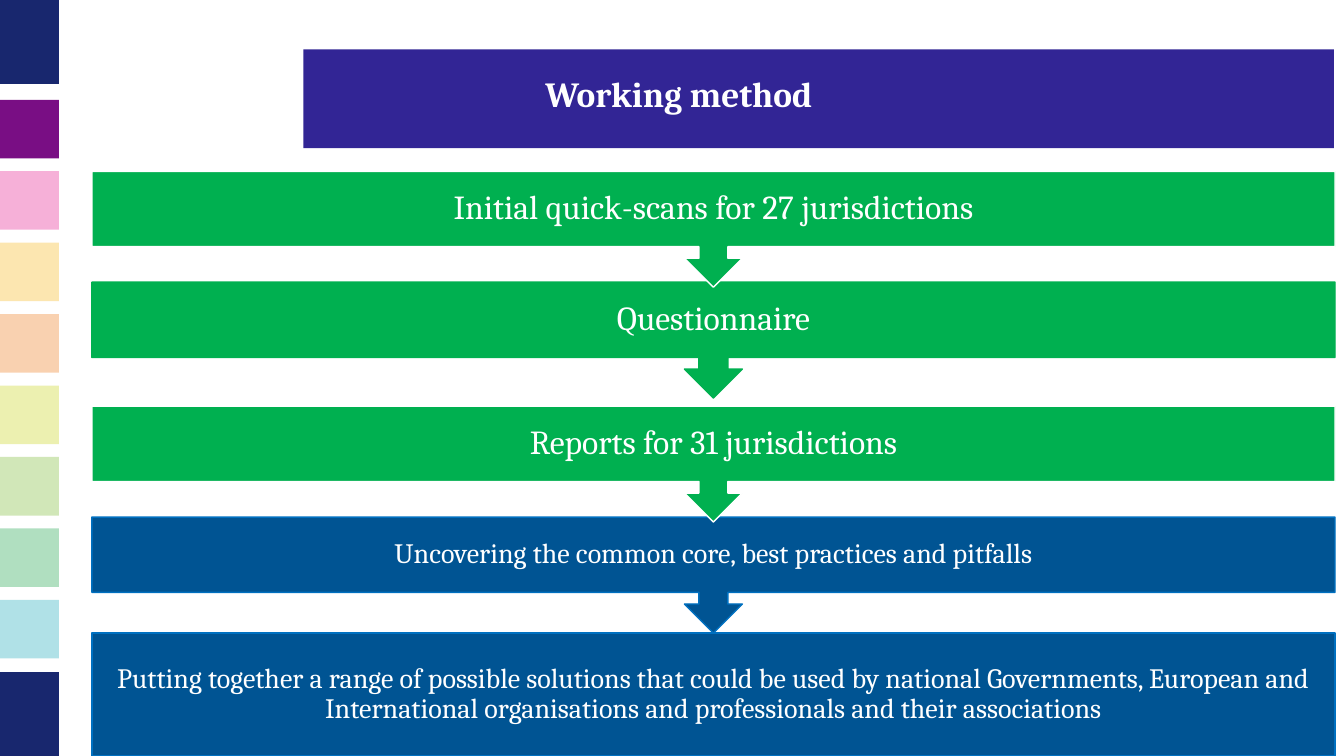
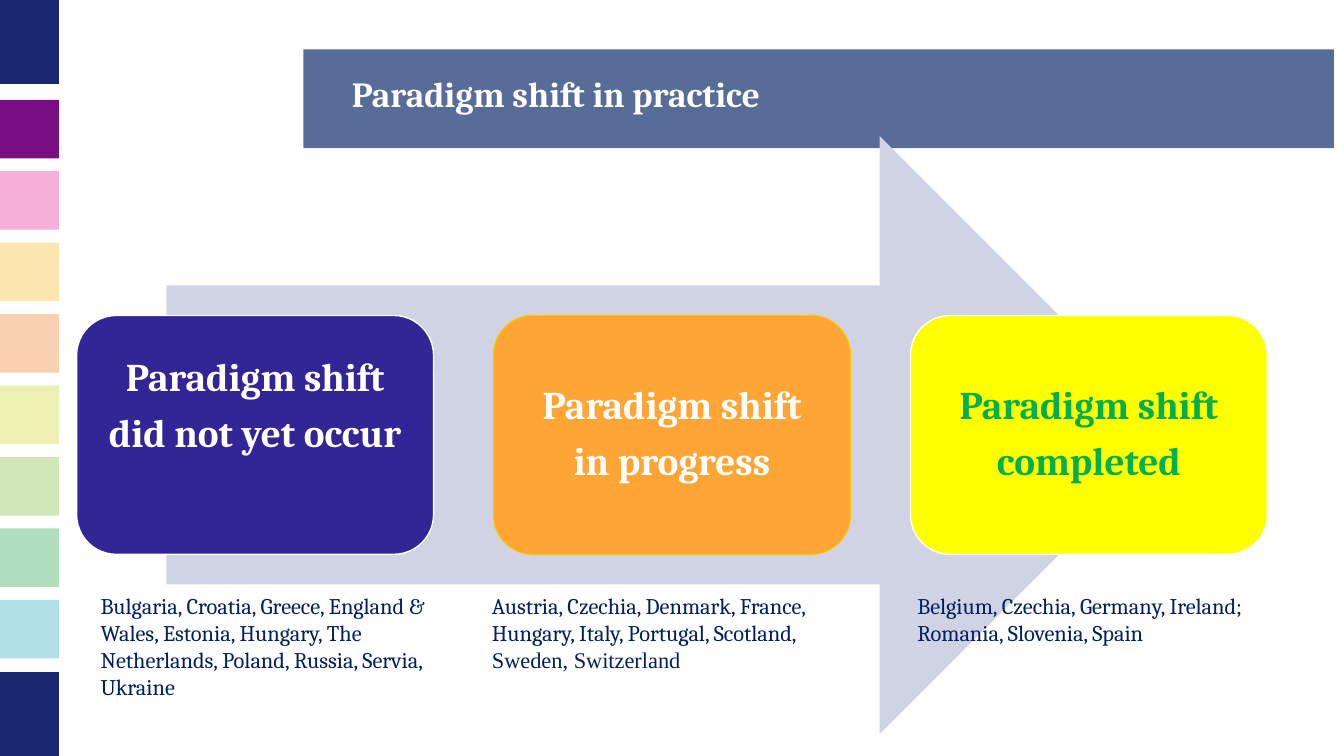
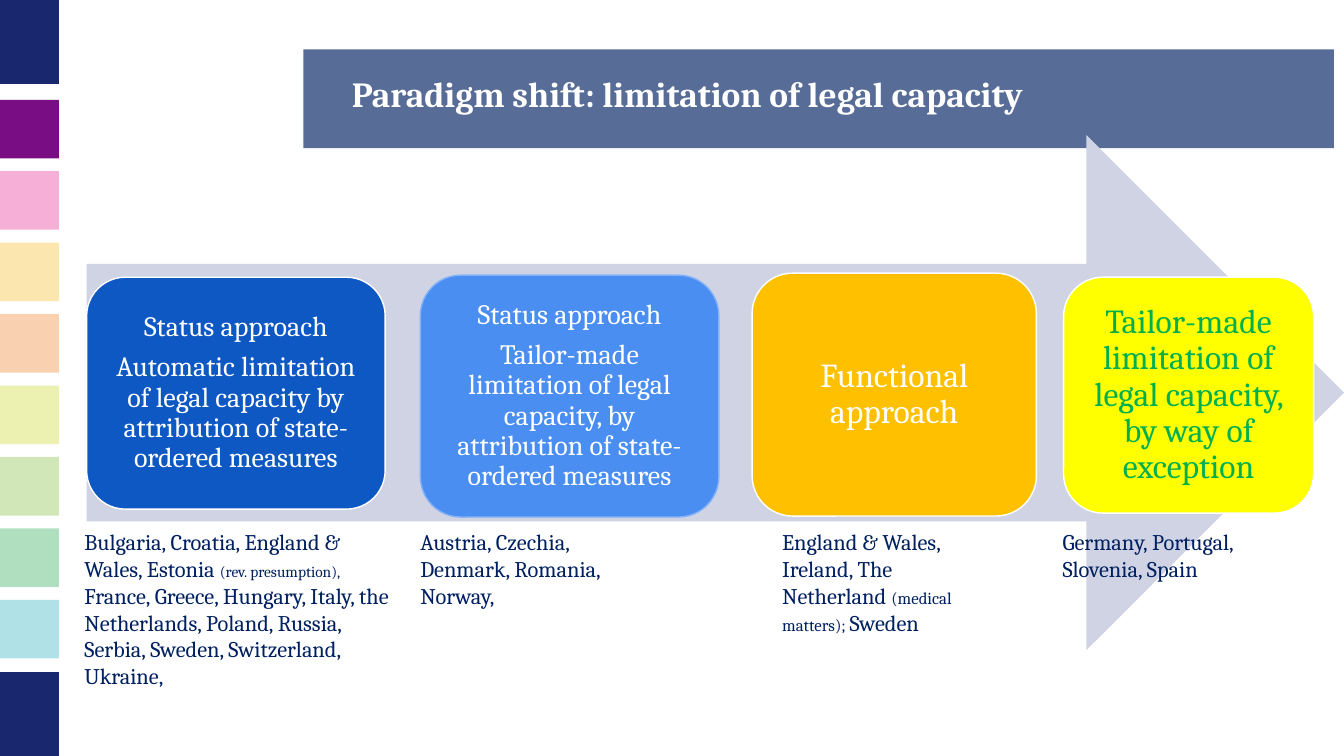
from dataclasses import dataclass

from lxml.etree import SubElement
from pptx import Presentation
from pptx.dml.color import RGBColor
from pptx.enum.shapes import MSO_SHAPE as Shape
from pptx.enum.text import MSO_ANCHOR as Anchor, MSO_AUTO_SIZE as Fit, PP_ALIGN as Align
from pptx.oxml.ns import qn
from pptx.util import Inches, Pt

FONT = "Cambria"
WHITE, NAVY, GREEN, BLUE = "FFFFFF", "002060", "00B050", "005493"
INDIGO, YELLOW, PALE = "322595", "FFFF00", "D0D3E3"
EDGE = "18276E"
STRIPS = ["790E84", "E40083", "F8B100", "EC6D00", "C2D000", "6CB21B", "009836", "00A1B3"]
WIDE, HIGH = Inches(13.33), Inches(7.5)


@dataclass(frozen=True)
class Area:
    """A rectangle in percent of the slide's width and height."""
    x: float
    y: float
    w: float
    h: float

    def emu(self) -> tuple[int, ...]:
        return tuple(round(part * side / 100) for part, side in
                     zip((self.x, self.y, self.w, self.h), (WIDE, HIGH) * 2))


@dataclass(frozen=True)
class Run:
    text: str
    size: float | None = None
    font: str = FONT


@dataclass(frozen=True)
class Step:
    text: str
    y: float
    fill: str = GREEN
    line: str = WHITE
    size: float = 24
    h: float = 15.33
    kind: Shape = Shape.DOWN_ARROW_CALLOUT


@dataclass(frozen=True)
class Card:
    """A rounded box of the arrow, with the countries below it."""
    area: Area
    paras: list[str]
    fill: str
    note: list[Run]
    note_x: float
    note_w: float
    line: str = WHITE
    color: str = WHITE
    size: float = 20
    bold: bool = False
    pad: float = 0.08
    low: float = 0


def rgb(code: str) -> RGBColor:
    return RGBColor.from_string(code)


def paint(shape, fill: str, alpha: int = 100) -> None:
    shape.fill.solid()
    shape.fill.fore_color.rgb = rgb(fill)
    if alpha < 100:
        tone = shape.element.spPr.find(qn("a:solidFill"))[0]
        SubElement(tone, qn("a:alpha")).set("val", str(alpha * 1000))


def write(shape, paras: list, *, size: float, color: str = WHITE, bold: bool = False,
          align: Align = Align.CENTER, anchor: Anchor = Anchor.MIDDLE, leading: float = 0.9,
          pads: tuple[float, float, float, float] = (0.1, 0.05, 0.1, 0.05)) -> None:
    """Fill a shape; a paragraph is a string or a list of runs, pads go left, top, right, bottom."""
    frame = shape.text_frame
    frame.word_wrap, frame.auto_size, frame.vertical_anchor = True, Fit.NONE, anchor
    (frame.margin_left, frame.margin_top,
     frame.margin_right, frame.margin_bottom) = map(Inches, pads)
    for i, para in enumerate(paras):
        line = frame.add_paragraph() if i else frame.paragraphs[0]
        line.alignment, line.line_spacing = align, leading
        line.space_before = Pt(0.35 * size if i else 0)
        for part in [Run(para)] if isinstance(para, str) else para:
            run = line.add_run()
            run.text = part.text
            font = run.font
            font.name, font.size, font.bold = part.font, Pt(part.size or size), bold
            font.color.rgb = rgb(color)


def block(slide, kind: Shape, area: Area, fill: str, line: str = "", alpha: int = 100):
    shape = slide.shapes.add_shape(kind, *area.emu())
    shape.shadow.inherit = False
    paint(shape, fill, alpha)
    if line:
        shape.line.color.rgb = rgb(line)
        shape.line.width = Pt(1)
    else:
        shape.line.fill.background()
    return shape


def dress(layout, slide) -> None:
    """Place the title on the layout and move the colour strips there."""
    head = layout.placeholders[0]
    head.left, head.top, head.width, head.height = Area(22.58, 6.53, 76.67, 13.07).emu()
    wide = 4.38
    rects = [(Area(0, y, wide, 11.1), EDGE, 100) for y in (0, 88.9)]
    rects += [(Area(0, 13.2 + 9.45 * i, wide, 7.75), tone, 31 if i else 100)
              for i, tone in enumerate(STRIPS)]
    for i, (area, tone, alpha) in enumerate(rects):
        strip = block(slide, Shape.RECTANGLE, area, tone, alpha=alpha).element
        strip.nvSpPr.cNvPr.set("id", str(100 + i))
        layout.shapes.element.insert(2 + i, strip)


def title(slide, text: str, fill: str, alpha: int = 100, indent: float = 0.48) -> None:
    head = slide.shapes.title
    paint(head, fill, alpha)
    write(head, [text], size=25.2, bold=True, align=Align.LEFT, pads=(indent, 0, 0.1, 0.05))


def flow(slide, steps: list[Step]) -> None:
    for step in reversed(steps):
        box = block(slide, step.kind, Area(6.83, step.y, 92.5, step.h), step.fill, step.line)
        write(box, [step.text], size=step.size, pads=(0.16, 0, 0.16, 0))


def shift(slide, arrow: Area, cards: list[Card], note_y: float) -> None:
    block(slide, Shape.RIGHT_ARROW, arrow, PALE)
    for card in cards:
        box = block(slide, Shape.ROUNDED_RECTANGLE, card.area, card.fill, card.line)
        pad = card.pad
        write(box, card.paras, size=card.size, color=card.color, bold=card.bold,
              pads=(pad, pad, pad, pad + card.low))
        place = Area(card.note_x, note_y, card.note_w, 15.73)
        write(slide.shapes.add_textbox(*place.emu()), [card.note], size=16, color=NAVY,
              align=Align.LEFT, anchor=Anchor.TOP, leading=1)


STEPS = [
    Step("Initial quick-scans for 27 jurisdictions", 22.67),
    Step("Questionnaire", 37.33, line=GREEN),
    Step("Reports for 31 jurisdictions", 53.73),
    Step("Uncovering the common core, best practices and pitfalls", 68.4, BLUE, "0070C0", 20),
    Step("Putting together a range of possible solutions that could be used by national "
         "Governments, European and International organisations and professionals and their "
         "associations", 83.73, BLUE, "0070C0", 20, 16.27, Shape.RECTANGLE),
]


def third(col: int, paras: list[str], fill: str, note: list[Run], note_x: float, **more) -> Card:
    return Card(Area(5.7 + 31.02 * col, 41.73, 26.56, 31.6), paras, fill, note, note_x, 26.63,
                size=28, bold=True, pad=0.12, **more)


STAGES = [
    third(0, ["Paradigm shift", "did not yet occur"], INDIGO,
          [Run("Bulgaria, Croatia, Greece, England & Wales, Estonia, Hungary, The Netherlands, "
               "Poland, Russia, Servia, Ukraine")], 6.75, low=0.56),
    third(1, ["Paradigm shift", "in progress"], "FFA535",
          [Run("Austria, Czechia, Denmark, France, Hungary, Italy, Portugal, Scotland, "),
           Run("Sweden, Switzerland", font="Times New Roman")], 35.86, line="FFC000"),
    third(2, ["Paradigm shift", "completed"], YELLOW,
          [Run("Belgium, Czechia, Germany, Ireland; Romania, Slovenia, Spain")], 67.52,
          color=GREEN),
]

LIMITS = [
    Card(Area(6.45, 36.67, 22.21, 30.67),
         ["Status approach",
          "Automatic limitation of legal capacity by attribution of state-ordered measures"],
         "0E58C4",
         [Run("Bulgaria, Croatia, England & Wales, Estonia "), Run("(rev. presumption), ", 11),
          Run("France, Greece, Hungary, Italy, the Netherlands, Poland, Russia, Serbia, Sweden, "
              "Switzerland, Ukraine,")], 5.55, 24.16),
    Card(Area(31.28, 36.4, 22.21, 32),
         ["Status approach",
          "Tailor-made limitation of legal capacity, by attribution of state-ordered measures"],
         "4A8EF2", [Run("Austria, Czechia, Denmark, Romania, Norway,")], 30.53, 17.93,
         line="85B2F6"),
    Card(Area(55.96, 36.13, 21.16, 32.13), ["Functional approach"], "FFC000",
         [Run("England & Wales, Ireland, The Netherland "), Run("(medical matters); ", 12),
          Run("Sweden")], 57.46, 16.8, size=24, pad=0.1),
    Card(Area(79.14, 36.67, 18.6, 31.2),
         ["Tailor-made limitation of legal capacity, by way of exception"], YELLOW,
         [Run("Germany, Portugal, Slovenia, Spain")], 78.32, 19.2,
         color=GREEN, size=24, pad=0.1),
]


def main() -> None:
    deck = Presentation()
    deck.slide_width, deck.slide_height = WIDE, HIGH
    layout = deck.slide_layouts[5]
    method, stages, limits = (deck.slides.add_slide(layout) for _ in range(3))
    dress(layout, method)

    title(method, "Working method", INDIGO, indent=2.4)
    flow(method, STEPS)

    title(stages, "Paradigm shift in practice", NAVY, 66)
    shift(stages, Area(12.38, 18, 75.32, 79.07), STAGES, 77.73)

    title(limits, "Paradigm shift: limitation of legal capacity", NAVY, 66)
    shift(limits, Area(6.45, 17.87, 93.55, 68.13), LIMITS, 69.2)
    deck.save("out.pptx")


if __name__ == "__main__":
    main()
